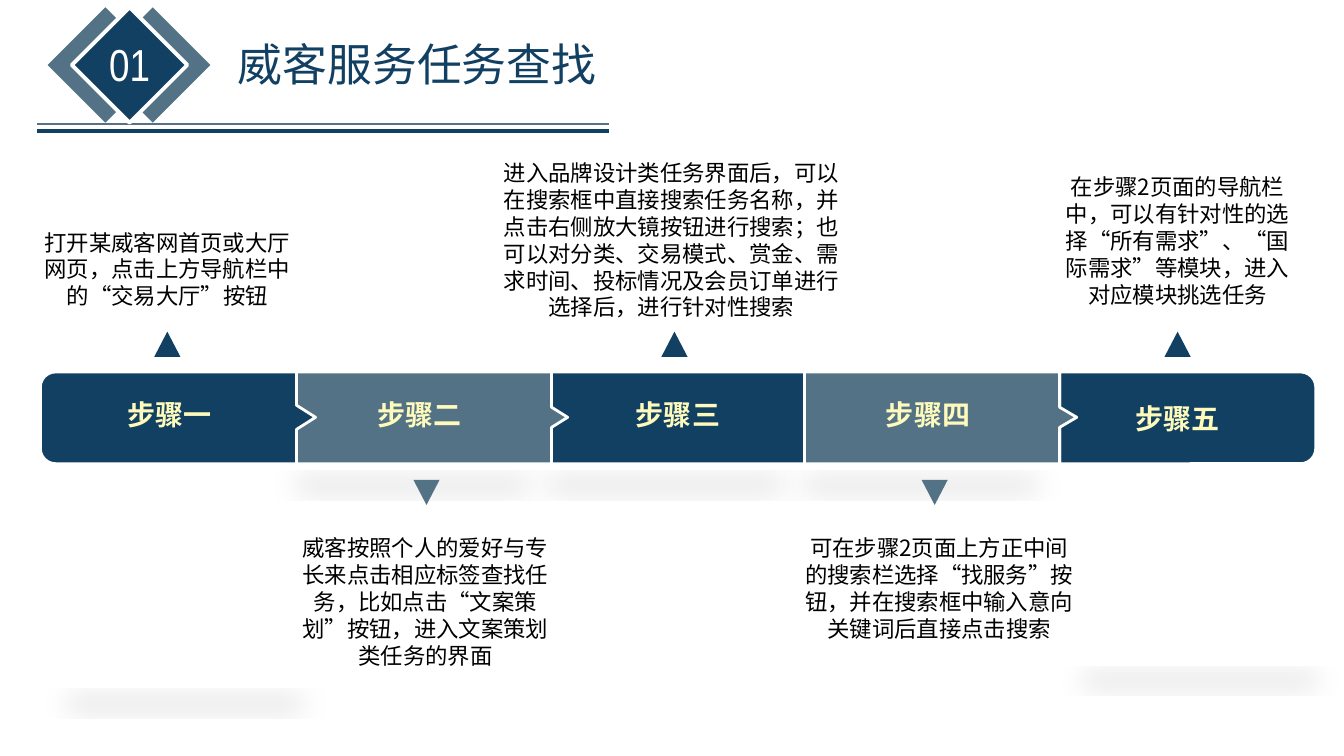
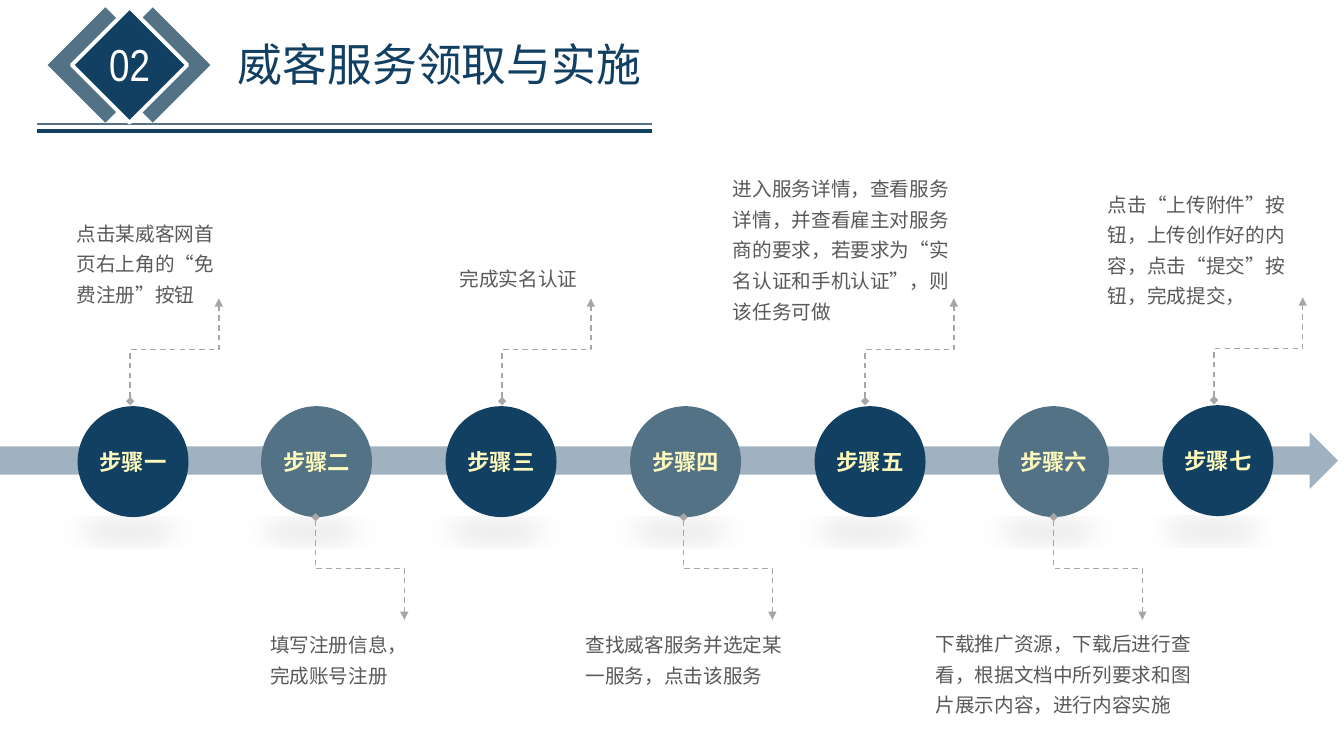
import math

import pptx
import pptx.dml.color
import pptx.enum.dml
import pptx.enum.lang
import pptx.enum.shapes
import pptx.enum.text
import pptx.oxml.ns
import pptx.util
from lxml import etree

Inches, Pt = pptx.util.Inches, pptx.util.Pt
RGB = pptx.dml.color.RGBColor.from_string
qn = pptx.oxml.ns.qn
SHAPE = pptx.enum.shapes.MSO_SHAPE
LINE = pptx.enum.shapes.MSO_CONNECTOR
ALIGN = pptx.enum.text.PP_ALIGN


class Theme:
    navy, slate, white, black = "124062", "537285", "FFFFFF", "000000"
    cream, body_grey, line_grey = "FEFABC", "595959", "A6A6A6"
    latin, cjk = "Arial Narrow", "Noto Sans CJK SC"
    title, band, body, small = 32, 20, 16, 14


def style(s, fill=None, line=None, width=1, shadow_distance=None, blur=20):
    """Set fill and outline; give a flattened shadow below, or none at all."""
    if fill:
        s.fill.solid()
        s.fill.fore_color.rgb = RGB(fill)
    if line:
        s.line.color.rgb = RGB(line)
        s.line.width = Pt(width)
    else:
        s.line.fill.background()
    effects = etree.SubElement(s.element.spPr, qn("a:effectLst"))
    if shadow_distance:
        shadow = etree.SubElement(
            effects, qn("a:outerShdw"), blurRad=str(Pt(blur)), dist=str(Pt(shadow_distance)),
            dir="5400000", sx="90000", sy="-19000", algn="bl", rotWithShape="0")
        color = etree.SubElement(shadow, qn("a:srgbClr"), val=Theme.black)
        etree.SubElement(color, qn("a:alpha"), val="10000")
    return s


def write(s, text, size, color, font=Theme.latin, bold=False, align=ALIGN.CENTER, spacing=None):
    tf = s.text_frame
    tf.word_wrap = True
    p = tf.paragraphs[0]
    p.alignment = align
    if spacing:
        p.line_spacing = spacing
    r = p.add_run()
    r.text = text
    r.font.name, r.font.size, r.font.bold = font, Pt(size), bold
    r.font.color.rgb = RGB(color)
    r.font.language_id = pptx.enum.lang.MSO_LANGUAGE_ID.SIMPLIFIED_CHINESE
    etree.SubElement(r.font._element, qn("a:ea"), typeface=Theme.cjk)
    return tf


prs = pptx.Presentation()
prs.slide_width, prs.slide_height = Inches(13.33), Inches(7.5)

# Shared heading: badge, title and double rule
trees = []
for number, title, rule_end in (("01", "威客服务任务查找", 6.04), ("02", "威客服务领取与实施", 6.47)):
    shapes = prs.slides.add_slide(prs.slide_layouts[6]).shapes
    trees.append(shapes)
    for y, color, width in ((1.23, Theme.slate, 1), (1.3, Theme.navy, 3)):
        rule = shapes.add_connector(
            LINE.STRAIGHT, Inches(0.37), Inches(y), Inches(rule_end), Inches(y))
        style(rule, line=color, width=width)
    for x, color, outline in ((1.11, Theme.slate, None), (0.64, Theme.slate, None),
                              (0.88, Theme.navy, Theme.white)):
        diamond = shapes.add_shape(
            SHAPE.RECTANGLE, Inches(x), Inches(0.24), Inches(0.81), Inches(0.81))
        diamond.rotation = 45
        style(diamond, color, outline, 2.75)
    box = shapes.add_textbox(Inches(0.95), Inches(0.32), Inches(0.67), Inches(0.64))
    write(box, number, Theme.title, Theme.white)
    box = shapes.add_textbox(Inches(2.26), Inches(0.32), Inches(7.11), Inches(0.64))
    write(box, title, Theme.title, Theme.navy, font=Theme.cjk, align=ALIGN.LEFT)

finding, doing = trees

# Slide 1: interlocking band, back to front
TOP, BOTTOM, MIDDLE, RADIUS = 3.69, 4.6, 4.14, 0.15
rounded_left = [
    (0.4 + RADIUS * (1 + math.cos(a)), cy + RADIUS * math.sin(a))
    for cy, first in ((BOTTOM - RADIUS, 90), (TOP + RADIUS, 180))
    for a in (math.radians(first + 15 * i) for i in range(7))
]
# label, left, right edge, tip length, half tip height, label left, label width, label top
band = (
    ("步骤五", 10.51, 13.05, None, None, 11.08, 1.19, 3.93),
    ("步骤三", 5.44, 7.98, 0.19, 0.12, 6.07, 1.31, 3.89),
    ("步骤二", 2.94, 5.47, 0.16, 0.1, 3.6, 1.13, 3.89),
    ("步骤一", 0.4, 2.94, 0.19, 0.12, 1.15, 1.07, 3.89),
    ("步骤四", 7.98, 10.51, 0.17, 0.1, 8.64, 1.13, 3.89),
)
for label, left, right, tip, half, label_x, label_w, label_y in band:
    height = BOTTOM - TOP
    if tip is None:
        s = finding.add_shape(
            SHAPE.ROUND_2_SAME_RECTANGLE, Inches((left + right - height) / 2),
            Inches((TOP + BOTTOM - right + left) / 2), Inches(height), Inches(right - left))
        s.rotation = 90
    else:
        points = [(right, TOP), (right, MIDDLE - half), (right + tip, MIDDLE),
                  (right, MIDDLE + half), (right, BOTTOM)]
        first_step = left == 0.4
        points += rounded_left if first_step else [(left, BOTTOM), (left, TOP)]
        if first_step:  # drawn upright, then turned a quarter
            cx, cy = (left + right + tip) / 2, (TOP + BOTTOM) / 2
            points = [(cx + y - cy, cy - x + cx) for x, y in points]
        points = [(Inches(x), Inches(y)) for x, y in points]
        outline = finding.build_freeform(*points[0])
        outline.add_line_segments(points[1:], close=True)
        s = outline.convert_to_shape()
        s.rotation = 90 if first_step else 0
    color = Theme.slate if label in ("步骤二", "步骤四") else Theme.navy
    style(s, color, Theme.white, 2, shadow_distance=9)
    box = finding.add_textbox(Inches(label_x), Inches(label_y), Inches(label_w), Inches(0.44))
    write(box, label, Theme.band, Theme.cream, bold=True)

# pointer left, text left, top, width, height, text
explanations = (
    (1.53, 0.33, 2.22, 2.66, 0.91, "打开某威客网首页或大厅网页，点击上方导航栏中的“交易大厅”按钮"),
    (4.1, 2.89, 5.25, 2.66, 1.45,
     "威客按照个人的爱好与专长来点击相应标签查找任务，比如点击“文案策划”按钮，进入文案策划类任务的界面"),
    (6.56, 4.82, 1.53, 3.68, 1.72,
     "进入品牌设计类任务界面后，可以在搜索框中直接搜索任务名称，并点击右侧放大镜按钮进行搜索；"
     "也可以对分类、交易模式、赏金、需求时间、投标情况及会员订单进行选择后，进行针对性搜索"),
    (9.14, 7.86, 5.25, 2.91, 1.18,
     "可在步骤2页面上方正中间的搜索栏选择“找服务”按钮，并在搜索框中输入意向关键词后直接点击搜索"),
    (11.55, 10.43, 1.67, 2.5, 1.45,
     "在步骤2页面的导航栏中，可以有针对性的选择“所有需求”、“国际需求”等模块，进入对应模块挑选任务"),
)
for pointer_x, x, y, w, h, text in explanations:
    below = y > BOTTOM
    pointer = finding.add_shape(SHAPE.ISOSCELES_TRIANGLE, Inches(pointer_x),
                                Inches(4.76 if below else 3.29), Inches(0.26), Inches(0.25))
    pointer.rotation = 180 if below else 0
    style(pointer, Theme.slate if below else Theme.navy)
    box = finding.add_textbox(Inches(x), Inches(y), Inches(w), Inches(h))
    write(box, text, Theme.body, Theme.black, font=Theme.cjk)

# Slide 2: timeline
arrow = style(doing.add_shape(SHAPE.RIGHT_ARROW, 0, Inches(4.29), Inches(13.27), Inches(0.56)),
              Theme.navy)
etree.SubElement(arrow.element.spPr.find(".//" + qn("a:srgbClr")), qn("a:alpha"), val="40000")

DIAMETER, RISE, RUN = 1.1, 1.02, 0.88
# label, circle left, circle top, connector start, text left, top, width, height, text
steps = (
    ("步骤一", 0.77, 4.03, 1.29, 0.66, 2.08, 1.59, 1.02, "点击某威客网首页右上角的“免费注册”按钮"),
    ("步骤二", 2.59, 4.03, 3.13, 2.58, 6.16, 1.67, 0.71, "填写注册信息，完成账号注册"),
    ("步骤三", 4.42, 4.03, 4.98, 4.46, 2.53, 1.5, 0.41, "完成实名认证"),
    ("步骤四", 6.25, 4.03, 6.78, 5.71, 6.16, 2.18, 0.71, "查找威客服务并选定某一服务，点击该服务"),
    ("步骤五", 8.08, 4.03, 8.58, 7.17, 1.64, 2.39, 1.63,
     "进入服务详情，查看服务详情，并查看雇主对服务商的要求，若要求为“实名认证和手机认证”，则该任务可做"),
    ("步骤六", 9.9, 4.03, 10.45, 9.18, 6.15, 2.77, 1.02,
     "下载推广资源，下载后进行查看，根据文档中所列要求和图片展示内容，进行内容实施"),
    ("步骤七", 11.53, 4.02, 12.04, 10.89, 1.79, 2.02, 1.32,
     "点击“上传附件”按钮，上传创作好的内容，点击“提交”按钮，完成提交，"),
)
for i, (label, circle_x, circle_y, start_x, x, y, w, h, text) in enumerate(steps):
    below = i % 2 == 1
    circle = doing.add_shape(SHAPE.OVAL, Inches(circle_x), Inches(circle_y),
                             Inches(DIAMETER), Inches(DIAMETER))
    style(circle, Theme.slate if below else Theme.navy, shadow_distance=3, blur=19)
    tf = write(circle, label, Theme.body, Theme.cream, bold=True)
    tf.margin_left = tf.margin_right = 0
    tf.vertical_anchor = pptx.enum.text.MSO_ANCHOR.MIDDLE

    # The elbow leaves vertically, so its frame lies on its side and is turned
    cx = start_x + RUN / 2
    cy = circle_y + DIAMETER + RISE / 2 if below else circle_y - 0.05 - RISE / 2
    drop = -RUN / 2 if below else RUN / 2
    elbow = doing.add_connector(LINE.ELBOW, Inches(cx + RISE / 2), Inches(cy + drop),
                                Inches(cx - RISE / 2), Inches(cy - drop))
    elbow.element.spPr.find(qn("a:xfrm")).set("rot", "16200000" if below else "5400000")
    style(elbow, line=Theme.line_grey)
    elbow.line.dash_style = pptx.enum.dml.MSO_LINE.DASH
    ln = elbow.element.spPr.find(qn("a:ln"))
    etree.SubElement(ln, qn("a:headEnd"), type="diamond")
    etree.SubElement(ln, qn("a:tailEnd"), type="triangle")

    box = doing.add_textbox(Inches(x), Inches(y), Inches(w), Inches(h))
    write(box, text, Theme.small, Theme.body_grey, align=ALIGN.LEFT, spacing=1.3)

prs.save("out.pptx")
